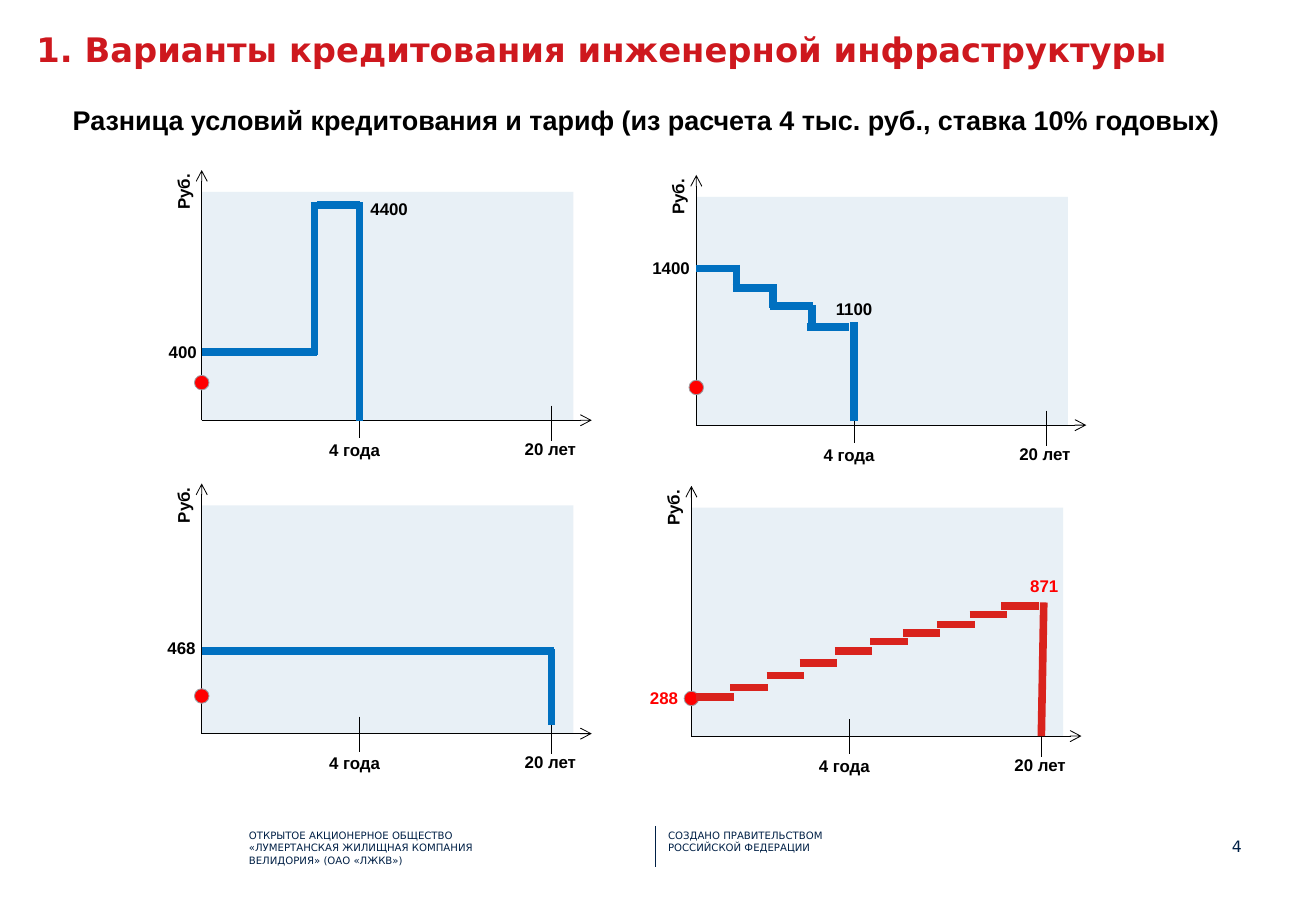
from lxml.etree import SubElement
from pptx import Presentation
from pptx.dml.color import RGBColor
from pptx.enum.shapes import MSO_CONNECTOR, MSO_SHAPE
from pptx.enum.text import PP_ALIGN
from pptx.oxml.ns import qn
from pptx.util import Inches, Pt

BLACK = RGBColor(0x00, 0x00, 0x00)
NAVY = RGBColor(0x00, 0x20, 0x46)
TITLE_RED = RGBColor(0xCE, 0x18, 0x1E)
BRIGHT_RED = RGBColor(0xFF, 0x00, 0x00)
LINE_RED = RGBColor(0xD9, 0x23, 0x1D)
LINE_BLUE = RGBColor(0x00, 0x70, 0xC0)
PALE_BLUE = RGBColor(0xDE, 0xEA, 0xF2)
GREY = RGBColor(0x9B, 0x9E, 0xA3)

PLOT_W, PLOT_H = 3.06, 1.88
YEAR_4, YEAR_20 = 1.3, 2.88


def add_text(s, text, x, y, w, h, size=10, color=BLACK, font="Arial", bold=True, inset=True):
    sp = s.shapes.add_textbox(Inches(x), Inches(y), Inches(w), Inches(h))
    tf = sp.text_frame
    tf.word_wrap = True
    if not inset:
        tf.margin_left = tf.margin_right = tf.margin_top = tf.margin_bottom = 0
    p = tf.paragraphs[0]
    p.text = text
    p.font.size = Pt(size)
    p.font.name = font
    p.font.bold = bold
    p.font.color.rgb = color
    return sp


def add_line(s, x1, y1, x2, y2, color=BLACK, width=0.5, arrow=False):
    line = s.shapes.add_connector(
        MSO_CONNECTOR.STRAIGHT, Inches(x1), Inches(y1), Inches(x2), Inches(y2))
    line.line.color.rgb = color
    line.line.width = Pt(width)
    if arrow:
        SubElement(line.line._get_or_add_ln(), qn("a:tailEnd"), type="arrow")
    SubElement(line._element.spPr, qn("a:effectLst"))


def add_filled(s, kind, color, x, y, w, h):
    sp = s.shapes.add_shape(kind, Inches(x), Inches(y), Inches(w), Inches(h))
    sp.shadow.inherit = False
    sp.fill.solid()
    sp.fill.fore_color.rgb = color
    sp.line.fill.background()
    return sp


def add_axes(s, x, y):
    area = add_filled(s, MSO_SHAPE.RECTANGLE, PALE_BLUE, x, y, PLOT_W, PLOT_H)
    rgb = area._element.spPr.find(qn("a:solidFill")).find(qn("a:srgbClr"))
    SubElement(rgb, qn("a:alpha"), val="67000")

    base = y + PLOT_H
    add_line(s, x, base, x + 3.21, base, arrow=True)
    add_line(s, x, base, x, y - 0.18, arrow=True)
    add_text(s, "Руб.", x - 0.42, y - 0.16, 0.54, 0.27).rotation = 270
    for label, year, tick_top, label_x, label_y in (
            ("4 года", YEAR_4, 0.14, 0.95, 0.11),
            ("20 лет", YEAR_20, 0.12, 2.56, 0.1)):
        tick_y = base - tick_top
        add_line(s, x + year, tick_y, x + year, tick_y + 0.29)
        add_text(s, label, x + label_x, base + label_y, 0.7, 0.27)

    dot = add_filled(s, MSO_SHAPE.OVAL, BRIGHT_RED, x - 0.06, y + 1.51, 0.12, 0.12)
    dot.line.color.rgb = GREY
    dot.line.width = Pt(0.5)


def add_plot(s, x, y, segments, labels, line_color=LINE_BLUE, label_color=BLACK):
    add_axes(s, x, y)
    for x1, y1, x2, y2 in segments:
        add_line(s, x + x1, y + y1, x + x2, y + y2, line_color, 4.5)
    for text, label_x, label_y in labels:
        add_text(s, text, x + label_x, y + label_y, 0.58, 0.27, color=label_color)


def steps(points, width):
    return [(x, y, x + width, y) for x, y in points]


def add_header(s):
    add_text(s, "1. Варианты кредитования инженерной инфраструктуры",
             0.3, 0.24, 9.99, 0.76, 20, TITLE_RED, "DejaVu Sans", inset=False)
    add_text(s, "Разница условий кредитования и тариф (из расчета 4 тыс. руб., ставка 10% годовых)",
             0.5, 0.8, 9.9, 0.37, 16)


def add_footer(s, y):
    for text, x, w, h in (
            ("ОТКРЫТОЕ АКЦИОНЕРНОЕ ОБЩЕСТВО «ЛУМЕРТАНСКАЯ ЖИЛИЩНАЯ КОМПАНИЯ "
             "ВЕЛИДОРИЯ» (ОАО «ЛЖКВ»)", 1.95, 2.45, 0.42),
            ("СОЗДАНО ПРАВИТЕЛЬСТВОМ РОССИЙСКОЙ ФЕДЕРАЦИИ", 5.4, 1.96, 0.31)):
        sp = add_text(s, text, x, y, w, h, 6, NAVY, "DejaVu Sans", False)
        sp.text_frame.paragraphs[0].line_spacing = 1.05
    add_line(s, 5.39, y + 0.03, 5.39, y + 0.37, NAVY)
    sp = add_text(s, "4", 9.68, y + 0.09, 0.54, 0.27, 16, NAVY, "DejaVu Sans", False, False)
    p = sp.text_frame.paragraphs[0]
    p.alignment = PP_ALIGN.RIGHT
    p.runs[0]._r.get_or_add_rPr().set("baseline", "30000")


def main():
    prs = Presentation()
    prs.slide_width, prs.slide_height = Inches(10.83), Inches(7.5)
    s = prs.slides.add_slide(prs.slide_layouts[6])
    add_header(s)

    add_plot(s, 1.66, 1.58,
             [(0, 1.32, 0.95, 1.32), (YEAR_4, 1.89, YEAR_4, 0.08),
              (0.93, 1.34, 0.93, 0.08), (YEAR_4, 0.11, 0.95, 0.11)],
             [("400", -0.37, 1.18), ("4400", 1.29, 0.01)])

    falling = [(0, 0.59), (0.3, 0.75), (0.61, 0.9), (0.91, 1.07)]
    add_plot(s, 5.73, 1.62,
             steps(falling, 0.35) +
             [(0.33, 0.56, 0.33, 0.75), (0.63, 0.72, 0.63, 0.92),
              (0.95, 0.89, 0.95, 1.08), (YEAR_4, 1.85, YEAR_4, 1.03)],
             [("1400", -0.46, 0.45), ("1100", 1.05, 0.79)])

    add_plot(s, 1.66, 4.16,
             [(YEAR_20, 1.81, YEAR_20, 1.18), (0, 1.2, 2.9, 1.2)],
             [("468", -0.38, 1.04)])

    rising = [(0.04, 1.56), (0.32, 1.48), (0.62, 1.38), (0.89, 1.28), (1.18, 1.18),
              (1.47, 1.1), (1.74, 1.03), (2.02, 0.96), (2.29, 0.88), (2.55, 0.81)]
    add_plot(s, 5.69, 4.18,
             steps(rising, 0.31) + [(YEAR_20, 1.88, 2.9, 0.78)],
             [("288", -0.44, 1.43), ("871", 2.69, 0.51)],
             LINE_RED, BRIGHT_RED)

    add_footer(s, 6.77)
    prs.save("out.pptx")


if __name__ == "__main__":
    main()
